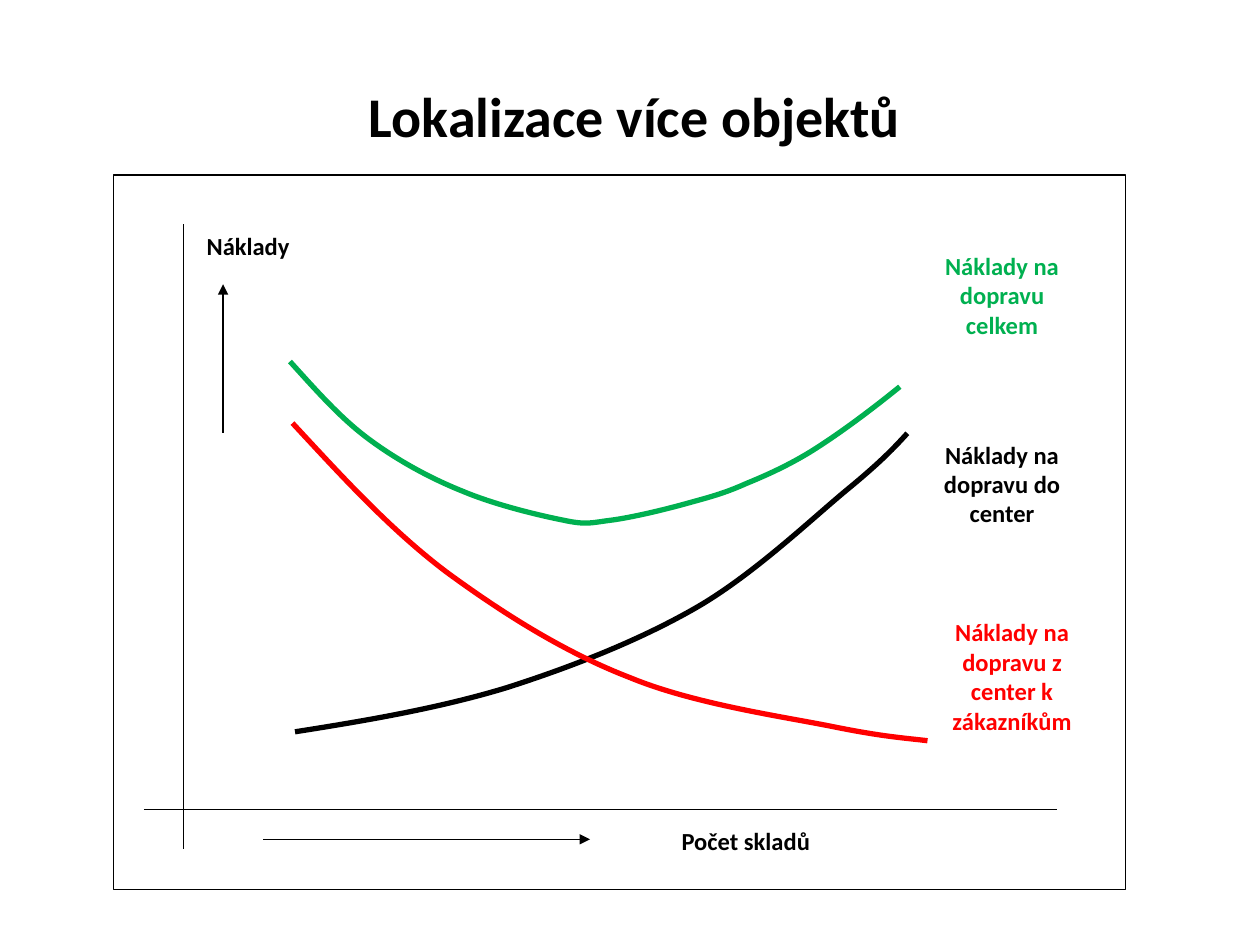
from math import cos, radians, sin

from lxml import etree
from pptx import Presentation
from pptx.dml.color import RGBColor
from pptx.enum.shapes import MSO_CONNECTOR as CONN, MSO_SHAPE as SHAPE
from pptx.enum.text import MSO_ANCHOR as ANCHOR, MSO_AUTO_SIZE as AUTO, PP_ALIGN as ALIGN
from pptx.oxml.ns import qn
from pptx.util import Pt

WHITE, BLACK, RED, GREEN = "FFFFFF", "000000", "FF0000", "00B050"

INBOUND = [(103.7, 318.2), (144.7, 311.8), (186.5, 304.6), (224.6, 293), (262.8, 280.8),
           (301, 265.7), (333.4, 247), (365.8, 228.2), (398.9, 196.6), (419, 180),
           (439.2, 163.4), (446.4, 155.5), (453.6, 147.6)]
OUTBOUND = [(102.2, 141.8), (130.3, 172.1), (157.7, 202.3), (190.1, 226.8), (222.5, 250.6),
            (257.8, 272.9), (295.2, 287.3), (331.9, 302.4), (383, 309.6), (411.8, 315.4),
            (439.9, 321.1), (452.9, 321.8), (465.1, 323.3)]
TOTAL = [(100.8, 106.6), (115.2, 122.4), (129.6, 139), (146.2, 151.2), (162.7, 163.4),
         (181.4, 173.5), (199.4, 180.7), (218.2, 188.6), (242.6, 194.4), (257, 197.3),
         (270.7, 200.2), (272.9, 198.7), (284.4, 197.3), (295.9, 195.8), (313.9, 191.5),
         (326.9, 187.9), (339.8, 184.3), (348.5, 182.2), (361.4, 176.4), (373.7, 171.4),
         (388.1, 164.9), (402.5, 155.5), (416.9, 146.2), (433.4, 133.9), (449.3, 121)]


def color(value):
    return RGBColor.from_string(value)


def fill_white(sp):
    sp.fill.solid()
    sp.fill.fore_color.rgb = color(WHITE)


def style_line(line, hex_color, width):
    line.color.rgb = color(hex_color)
    line.width = Pt(width)


def style_text(p, size, hex_color, align):
    p.alignment = align
    p.font.name = "Calibri"
    p.font.size = Pt(size)
    p.font.bold = True
    p.font.color.rgb = color(hex_color)


def add_title(slide, x, y, w, h):
    sp = slide.shapes.title
    sp.left, sp.top, sp.width, sp.height = Pt(x), Pt(y), Pt(w), Pt(h)
    fill_white(sp)
    tf = sp.text_frame
    tf.text = "Lokalizace více objektů"
    tf.auto_size = AUTO.NONE
    tf.vertical_anchor = ANCHOR.MIDDLE
    style_text(tf.paragraphs[0], 32, BLACK, ALIGN.CENTER)


def add_label(slide, text, x, y, w, h, hex_color=BLACK, align=ALIGN.CENTER):
    tf = slide.shapes.add_textbox(Pt(x), Pt(y), Pt(w), Pt(h)).text_frame
    tf.word_wrap = True
    tf.text = text
    style_text(tf.paragraphs[0], 14, hex_color, align)


def add_line(slide, x1, y1, x2, y2, arrow=False):
    line = slide.shapes.add_connector(CONN.STRAIGHT, Pt(x1), Pt(y1), Pt(x2), Pt(y2))
    style_line(line.line, BLACK, 0.75)
    if arrow:
        etree.SubElement(line.line._get_or_add_ln(), qn("a:tailEnd"), type="triangle")
    etree.SubElement(line._element.spPr, qn("a:effectLst"))


def turn_nodes(nodes, angle):
    cx, cy = ((a + b) / 2 for a, b in zip(nodes[0], nodes[-1]))
    c, s = cos(radians(angle)), sin(radians(angle))
    return [(cx + (x - cx) * c - (y - cy) * s, cy + (x - cx) * s + (y - cy) * c)
            for x, y in nodes]


def make_cubic(sp):
    outline = next(sp._element.iter(qn("a:path")))
    segments = outline.findall(qn("a:lnTo"))
    for i in range(0, len(segments), 3):
        cubic = etree.SubElement(outline, qn("a:cubicBezTo"))
        for segment in segments[i:i + 3]:
            cubic.append(segment[0])
            outline.remove(segment)


def add_curve(slide, x, y, nodes, hex_color, rotation):
    points = [(Pt(x + px), Pt(y + py)) for px, py in turn_nodes(nodes, -rotation)]
    builder = slide.shapes.build_freeform(*points[0])
    builder.add_line_segments(points[1:], close=False)
    sp = builder.convert_to_shape()
    make_cubic(sp)
    sp.rotation = rotation
    sp.shadow.inherit = False
    sp.fill.background()
    style_line(sp.line, hex_color, 3)


def add_cost_diagram(slide, x, y, w, h):
    frame = slide.shapes.add_shape(SHAPE.RECTANGLE, Pt(x), Pt(y), Pt(w), Pt(h))
    frame.shadow.inherit = False
    fill_white(frame)
    style_line(frame.line, BLACK, 0.75)

    add_line(slide, x + 40.1, y + 28.2, x + 40.1, y + 385.3)
    add_line(slide, x + 17.3, y + 362.7, x + 539.2, y + 362.7)
    add_line(slide, x + 85.5, y + 379.6, x + 272.3, y + 379.6, arrow=True)
    add_line(slide, x + 62.6, y + 147.4, x + 62.6, y + 62.4, arrow=True)
    add_label(slide, "Náklady", x + 34.4, y + 28.3, 85, 24.5)
    add_label(slide, "Počet skladů", x + 317.5, y + 368.6, 244, 24, align=ALIGN.LEFT)

    for nodes, hex_color, rotation, text, top, width, height in (
        (INBOUND, BLACK, 0, "Náklady na dopravu do center", 147.6, 85, 58.3),
        (OUTBOUND, RED, 59.4, "Náklady na dopravu z center k zákazníkům", 249.3, 96.5, 75),
        (TOTAL, GREEN, 0, "Náklady na dopravu celkem", 39.8, 85, 58.3),
    ):
        add_curve(slide, x, y, nodes, hex_color, rotation)
        add_label(slide, text, x + 465.2, y + top, width, height, hex_color)


def main():
    prs = Presentation()
    prs.slide_width, prs.slide_height = Pt(720), Pt(540)
    slide = prs.slides.add_slide(prs.slide_layouts[5])
    add_title(slide, 161.5, 43, 402.5, 46)
    add_cost_diagram(slide, 64.9, 100, 578.2, 408.2)
    prs.save("out.pptx")


if __name__ == "__main__":
    main()
